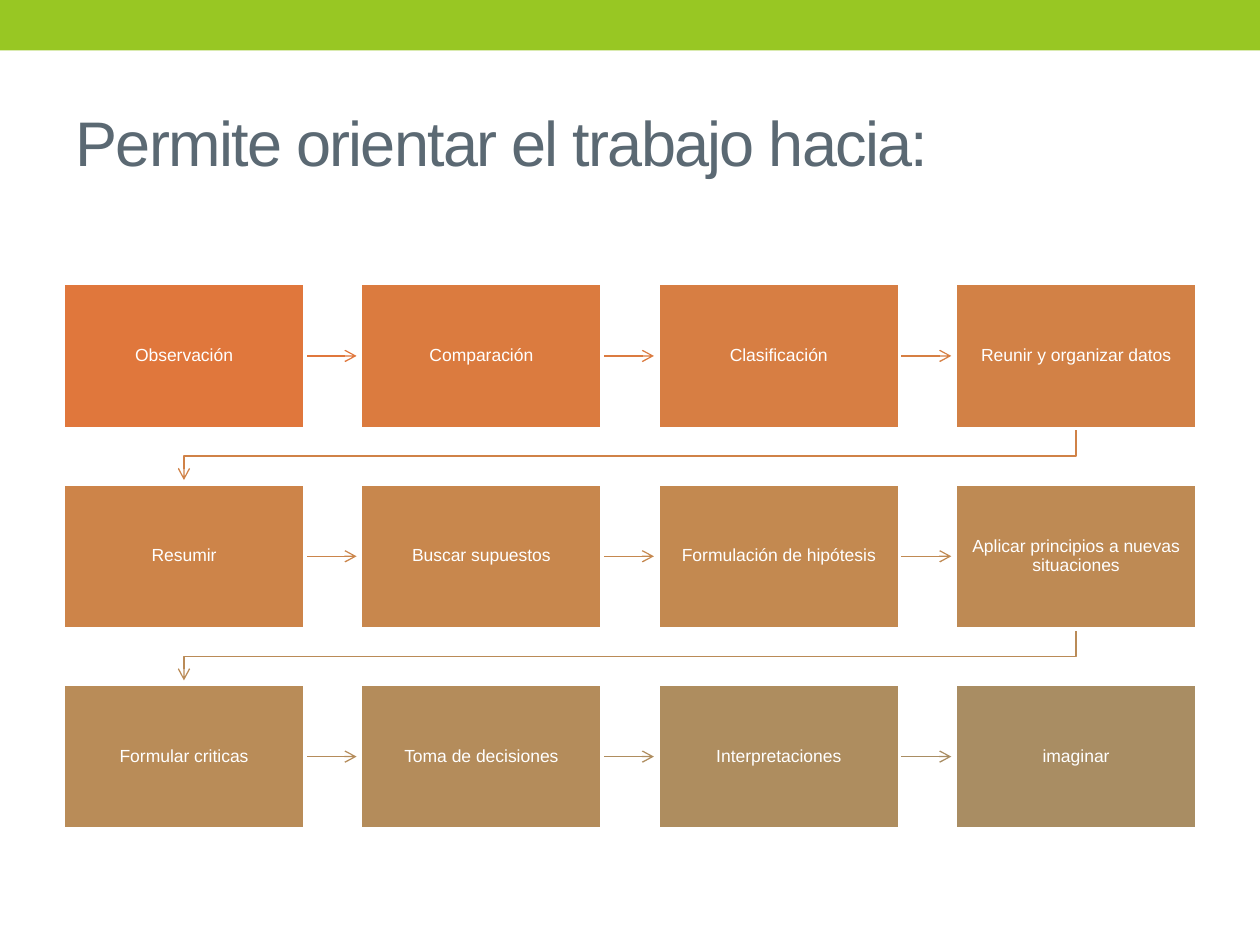
from typing import NamedTuple

from lxml import etree
from pptx import Presentation
from pptx.dml.color import RGBColor
from pptx.enum.shapes import MSO_CONNECTOR, MSO_SHAPE
from pptx.enum.text import MSO_ANCHOR, PP_ALIGN
from pptx.oxml.ns import qn
from pptx.util import Inches, Pt

RECT = MSO_SHAPE.RECTANGLE
STRAIGHT = MSO_CONNECTOR.STRAIGHT
MIDDLE = MSO_ANCHOR.MIDDLE
LEFT, CENTER = PP_ALIGN.LEFT, PP_ALIGN.CENTER
RIGHT_SIDE = 3
FONT = "Arial"
WHITE = "FFFFFF"

# Grid of steps, in inches
COLS = 4
LEFT_EDGE, TOP_EDGE = 0.5, 2.25
BOX_W, BOX_H = 1.92, 1.15
PITCH_X, PITCH_Y = 2.36, 1.59
ARROW_LEN = 0.41
BEND = 0.22


class Step(NamedTuple):
    text: str
    fill: str
    arrow: str = ""  # colour of the arrow to the next step


STEPS = [
    Step("Observación", "E0773C", "E0773C"),
    Step("Comparación", "DB7B3F", "DB7B40"),
    Step("Clasificación", "D77E43", "D67F43"),
    Step("Reunir y organizar datos", "D28146", "D08247"),
    Step("Resumir", "CD8449", "CB854B"),
    Step("Buscar supuestos", "C8874D", "C5884F"),
    Step("Formulación de hipótesis", "C38950", "C08A53"),
    Step("Aplicar principios a nuevas situaciones", "BE8A54", "BA8B57"),
    Step("Formular criticas", "B98C58", "B58C5B"),
    Step("Toma de decisiones", "B48C5B", "AF8D5F"),
    Step("Interpretaciones", "AE8D5F", "A98D63"),
    Step("imaginar", "A98D63"),
]


def rgb(color: str) -> RGBColor:
    return RGBColor.from_string(color)


def format_text(tf, size: float, color: str, align):
    """Format the only paragraph of a text frame and return its run."""
    tf.word_wrap = True
    tf.vertical_anchor = MIDDLE
    p = tf.paragraphs[0]
    p.alignment = align
    r = p.runs[0]
    r.font.name, r.font.size = FONT, Pt(size)
    r.font.color.rgb = rgb(color)
    return r


def add_rect(slide, x: float, y: float, w: float, h: float, fill: str):
    sp = slide.shapes.add_shape(RECT, Inches(x), Inches(y), Inches(w), Inches(h))
    sp.shadow.inherit = False
    sp.fill.solid()
    sp.fill.fore_color.rgb = rgb(fill)
    sp.line.fill.background()
    return sp


def add_box(slide, step: Step, x: float, y: float):
    sp = add_rect(slide, x, y, BOX_W, BOX_H, step.fill)
    sp.line.color.rgb = rgb(WHITE)
    sp.line.width = Pt(2.08)
    tf = sp.text_frame
    tf.text = step.text
    tf.margin_left = tf.margin_right = tf.margin_top = tf.margin_bottom = Inches(0.08)
    format_text(tf, 10, WHITE, CENTER)
    tf.paragraphs[0].line_spacing = 0.9
    return sp


def style_arrow(sp, color: str) -> None:
    sp.line.color.rgb = rgb(color)
    sp.line.width = Pt(0.75)
    etree.SubElement(sp.line._get_or_add_ln(), qn("a:tailEnd"), type="arrow")
    etree.SubElement(sp._element.spPr, qn("a:effectLst"))


def add_next_arrow(slide, box, x: float, y: float, color: str):
    """Short arrow from the right side of a box."""
    start, mid = x + BOX_W, y + BOX_H / 2
    sp = slide.shapes.add_connector(
        STRAIGHT, Inches(start), Inches(mid), Inches(start + ARROW_LEN), Inches(mid))
    sp.begin_connect(box, RIGHT_SIDE)
    style_arrow(sp, color)
    return sp


def add_return_arrow(slide, x: float, y: float, color: str):
    """Bent arrow from the last box of a row to the first of the next."""
    start_x, end_x = x + BOX_W / 2, LEFT_EDGE + BOX_W / 2
    bottom = y + BOX_H
    fb = slide.shapes.build_freeform(Inches(start_x), Inches(bottom))
    corners = [(start_x, bottom + BEND), (end_x, bottom + BEND),
               (end_x, bottom + ARROW_LEN)]
    fb.add_line_segments([(Inches(cx), Inches(cy)) for cx, cy in corners], close=False)
    sp = fb.convert_to_shape()
    sp.fill.background()
    style_arrow(sp, color)
    return sp


def main() -> None:
    prs = Presentation()
    prs.slide_width, prs.slide_height = Inches(10), Inches(7.5)
    slide = prs.slides.add_slide(prs.slide_layouts[5])

    # Top band
    add_rect(slide, 0, 0, 10, 0.4, "98C723")

    # Title
    title = slide.shapes.title
    title.left, title.top = Inches(0.5), Inches(0.58)
    title.width, title.height = Inches(9), Inches(1.08)
    title.text_frame.text = "Permite orientar el trabajo hacia:"
    r = format_text(title.text_frame, 36, "5B6973", LEFT)
    r.font._element.set("spc", "-100")

    # Steps, each with its arrow tucked behind the box border
    for i, step in enumerate(STEPS):
        row, col = divmod(i, COLS)
        x, y = LEFT_EDGE + col * PITCH_X, TOP_EDGE + row * PITCH_Y
        box = add_box(slide, step, x, y)
        if not step.arrow:
            continue
        if col < COLS - 1:
            arrow = add_next_arrow(slide, box, x, y, step.arrow)
        else:
            arrow = add_return_arrow(slide, x, y, step.arrow)
        box._element.addprevious(arrow._element)

    prs.save("out.pptx")


if __name__ == "__main__":
    main()
